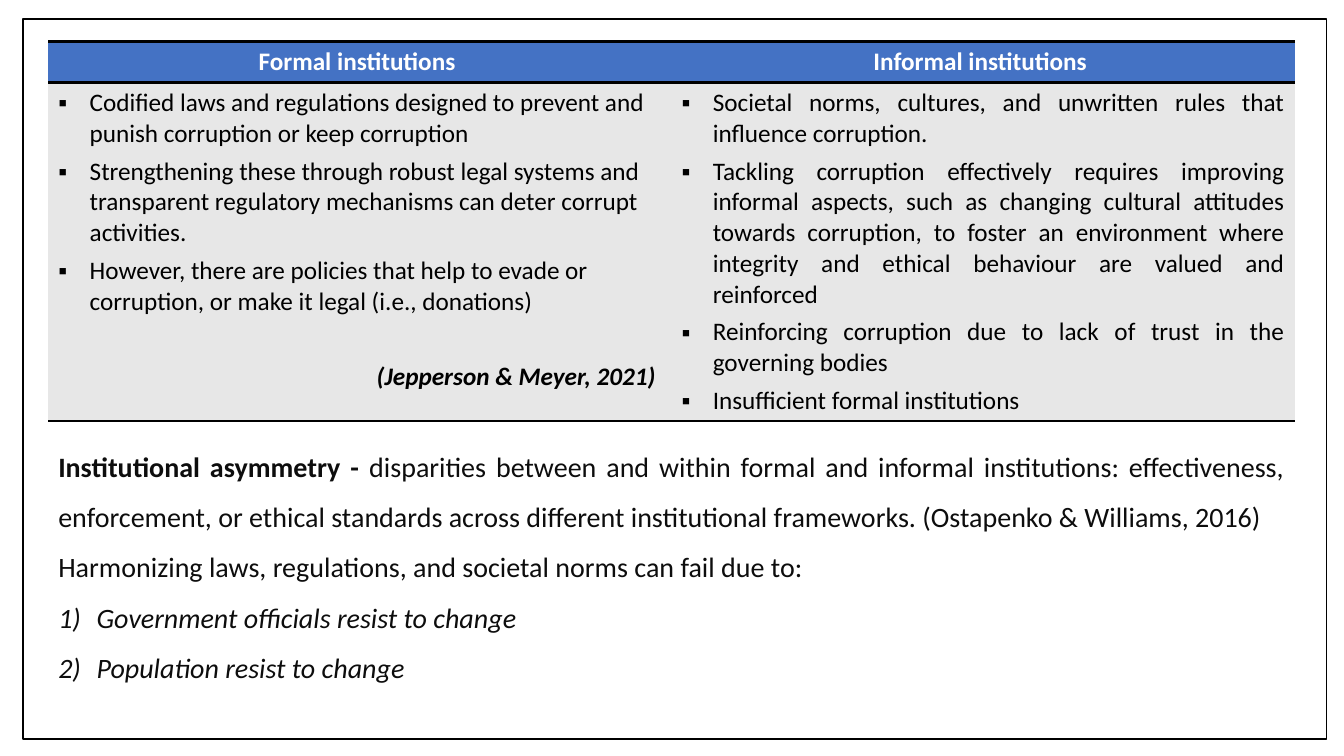
"""Build a slide comparing formal and informal institutions."""
from lxml import etree
from pptx import Presentation
from pptx.dml.color import RGBColor
from pptx.enum.shapes import MSO_SHAPE
from pptx.enum.text import MSO_AUTO_SIZE, PP_ALIGN
from pptx.oxml import parse_xml
from pptx.oxml.ns import qn
from pptx.util import Inches, Pt

RECTANGLE = MSO_SHAPE.RECTANGLE
GROW = MSO_AUTO_SIZE.SHAPE_TO_FIT_TEXT
LEFT, CENTER, RIGHT, JUSTIFY = PP_ALIGN.LEFT, PP_ALIGN.CENTER, PP_ALIGN.RIGHT, PP_ALIGN.JUSTIFY
NAMESPACE = "http://schemas.openxmlformats.org/drawingml/2006/main"
NO_TABLE_STYLE = "{2D5ABB26-0587-4C30-8999-92F81FD0307C}"
SQUARE = [("buFont", {"typeface": "Arial"}), ("buChar", {"char": "▪"})]
NUMBER = [("buFont", {"typeface": "+mj-lt"}), ("buAutoNum", {"type": "arabicParenR"})]


def color(value):
    return RGBColor.from_string(value)


def add_paragraph(frame, text, size, font_color, alignment, bullet=(), indent=0):
    paragraph = frame.paragraphs[0]
    if paragraph.runs:
        paragraph = frame.add_paragraph()
    paragraph.add_run().text = text
    paragraph.alignment = alignment
    if bullet:
        properties = paragraph._p.get_or_add_pPr()
        properties.set("marL", str(Inches(indent)))
        properties.set("indent", str(-Inches(indent)))
        for tag, attributes in bullet:
            etree.SubElement(properties, qn(f"a:{tag}"), attributes)
    paragraph.font.name = "Calibri"
    paragraph.font.size = Pt(size)
    paragraph.font.color.rgb = color(font_color)
    return paragraph


presentation = Presentation()
presentation.slide_width = Inches(13.33)
presentation.slide_height = Inches(7.5)
slide = presentation.slides.add_slide(presentation.slide_layouts[6])

frame_shape = slide.shapes.add_shape(RECTANGLE, Inches(0.23), Inches(0.19), Inches(12.93), Inches(7.14))
frame_shape.shadow.inherit = False
frame_shape.fill.background()
frame_shape.line.color.rgb = color("000000")
frame_shape.line.width = Pt(1)

columns = [
    ("Formal institutions ", LEFT, [
        "Codified laws and regulations designed to prevent and punish corruption or keep corruption",
        "Strengthening these through robust legal systems and transparent regulatory mechanisms "
        "can deter corrupt activities.",
        "However, there are policies that help to evade or corruption, or make it legal (i.e., donations)",
    ]),
    ("Informal institutions ", JUSTIFY, [
        "Societal norms, cultures, and unwritten rules that influence corruption. ",
        "Tackling corruption effectively requires improving informal aspects, such as changing cultural "
        "attitudes towards corruption, to foster an environment where integrity and ethical behaviour "
        "are valued and reinforced",
        "Reinforcing corruption due to lack of trust in the governing bodies ",
        "Insufficient formal institutions ",
    ]),
]
table = slide.shapes.add_table(2, 2, Inches(0.48), Inches(0.41), Inches(12.36), Inches(3.71)).table
table._tbl.tblPr.find(qn("a:tableStyleId")).text = NO_TABLE_STYLE
table.horz_banding = False
table.rows[0].height = Inches(0.41)
table.rows[1].height = Inches(3.3)

for column, (heading, alignment, points) in enumerate(columns):
    header, body = table.cell(0, column), table.cell(1, column)
    add_paragraph(header.text_frame, heading, 18, "FFFFFF", CENTER).font.bold = True
    for point in points:
        add_paragraph(body.text_frame, point, 18, "000000", alignment, SQUARE, 0.31)
    for cell, fill, sides in ((header, "4472C4", "TB"), (body, "E7E7E7", "B")):
        cell.fill.solid()
        cell.fill.fore_color.rgb = color(fill)
        for position, side in enumerate(sides):
            border = parse_xml(
                f'<a:ln{side} xmlns:a="{NAMESPACE}" w="{Pt(2)}"><a:solidFill>'
                f'<a:srgbClr val="000000"/></a:solidFill></a:ln{side}>')
            cell._tc.get_or_add_tcPr().insert(position, border)

citation = add_paragraph(table.cell(1, 0).text_frame, "(Jepperson & Meyer, 2021) ", 18, "000000", RIGHT)
citation.font.bold = True
citation.font.italic = True
citation.space_before = Pt(27)
for cell in table.iter_cells():
    for paragraph in cell.text_frame.paragraphs:
        paragraph.space_after = Pt(5)

summary = slide.shapes.add_textbox(Inches(0.48), Inches(4.24), Inches(12.36), Inches(2.57)).text_frame
summary.word_wrap = True
summary.auto_size = GROW
definition = add_paragraph(summary, "Institutional asymmetry - ", 20, "0D0D0D", JUSTIFY)
definition.runs[0].font.bold = True
definition.add_run().text = (
    "disparities between and within formal and informal institutions: effectiveness, enforcement, or "
    "ethical standards across different institutional frameworks. (Ostapenko & Williams, 2016) ")
add_paragraph(summary, "Harmonizing laws, regulations, and societal norms can fail due to:", 20, "0D0D0D", JUSTIFY)
for reason in ("Government officials resist to change ", "Population resist to change "):
    add_paragraph(summary, reason, 20, "0D0D0D", JUSTIFY, NUMBER, 0.38).font.italic = True
for paragraph in summary.paragraphs:
    paragraph.line_spacing = 1.5

presentation.save("out.pptx")
